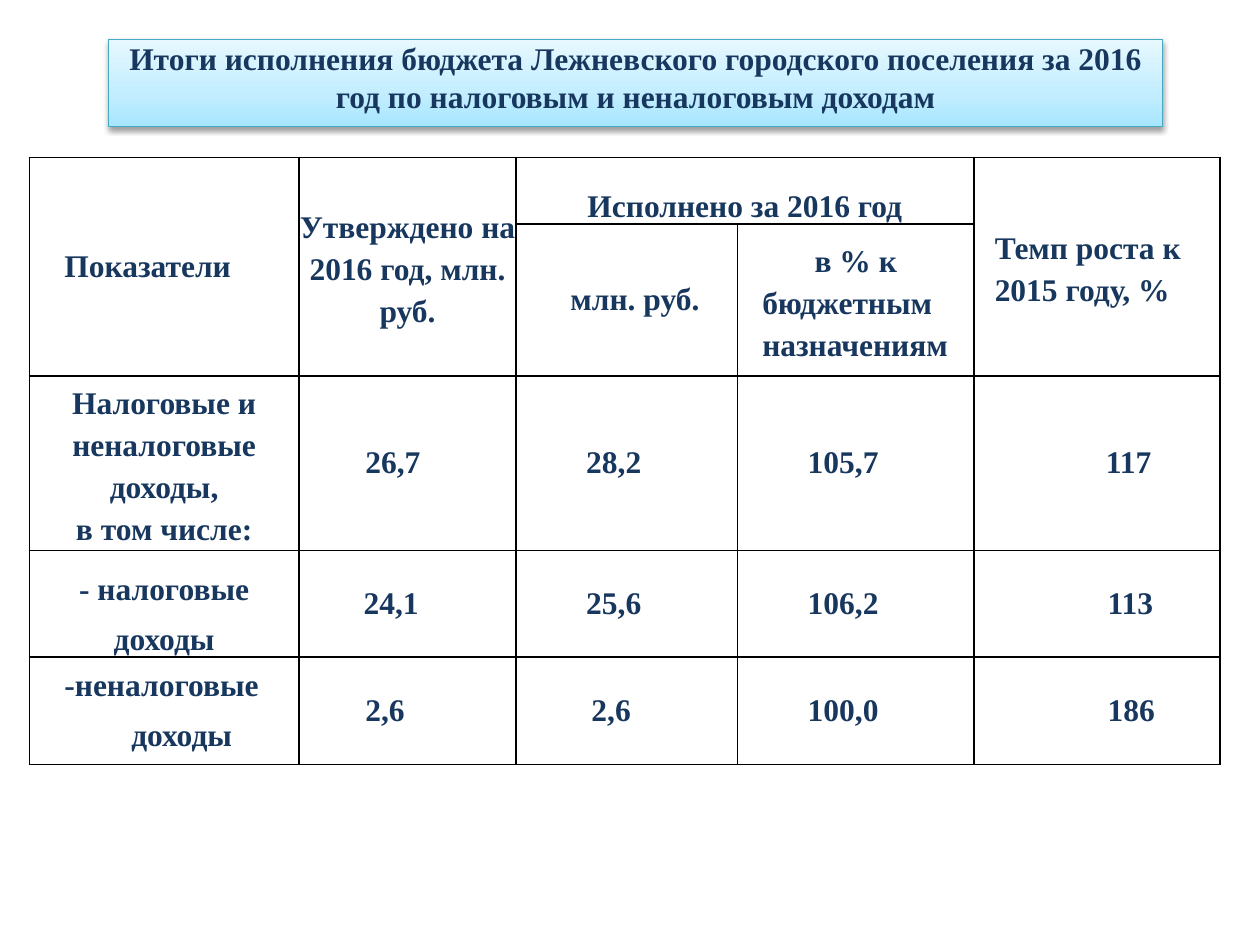
from copy import deepcopy
from pptx import Presentation
from pptx.dml.color import RGBColor
from pptx.enum.shapes import MSO_SHAPE
from pptx.enum.text import MSO_ANCHOR, PP_ALIGN
from pptx.oxml import parse_xml
from pptx.oxml.ns import nsdecls, qn
from pptx.util import Pt

HUES = {"ink": "17375E", "edge": "46AAC5", "rule": "000000",
        "low": "A7E6FF", "mid": "C1EDFF", "high": "E7F8FF"}
FONT = {"name": "Times New Roman", "size": Pt(18), "bold": True}
FLUSH = {f"margin_{side}": 0 for side in ("left", "top", "right", "bottom")}
TITLE = ("Итоги исполнения бюджета Лежневского городского поселения за 2016 "
         "год по налоговым и неналоговым доходам")

COLS = [154, 124.2, 126.6, 134.9, 140.6]
ROWS = [38, 87, 99.7, 60.8, 61.4]
MERGES = [((0, 0), (1, 0)), ((0, 1), (1, 1)), ((0, 2), (0, 3)), ((0, 4), (1, 4))]


def put(item, **vals):
    for key, val in vals.items():
        setattr(item, key, val)


def line(text, left=None, **vals):
    """One paragraph: centred unless it has a left indent."""
    align = PP_ALIGN.CENTER if left is None else PP_ALIGN.LEFT
    return text, left or 0, {"alignment": align, **vals}


def write(frame, lines):
    for num, (text, left, vals) in enumerate(lines):
        para = frame.add_paragraph() if num else frame.paragraphs[0]
        put(para, **vals)
        if left:
            props = para._p.get_or_add_pPr()
            props.set("marL", str(int(Pt(left))))
            props.set("indent", "0")
        run = para.add_run()
        run.text = text
        put(run.font, **FONT)
        run.font.color.rgb = RGBColor.from_string(HUES["ink"])


WIDE = {"line_spacing": Pt(24)}
GAP = {"space_after": Pt(8.4)}
HEADS = {
    (0, 0): [line("Показатели", 20)],
    (0, 1): [line("Утверждено на 2016 год, млн. руб.", **WIDE)],
    (0, 2): [line("Исполнено за 2016 год")],
    (0, 4): [line("Темп роста к 2015 году, %", 12, **WIDE)],
    (1, 2): [line("млн. руб.", 31)],
    (1, 3): [line("в % к", **WIDE), line("бюджетным", 14, **WIDE),
             line("назначениям", 14, **WIDE)],
    (2, 0): [line("Налоговые и неналоговые доходы,", **WIDE),
             line("в том числе:", **WIDE)],
    (3, 0): [line("- налоговые", **GAP), line("доходы")],
    (4, 0): [line("-неналоговые", 20, **GAP),
             ("доходы", 20, {"alignment": PP_ALIGN.CENTER})],
}
# Values by row, each with its left indent
DATA = [
    [("26,7", 38), ("28,2", 40), ("105,7", 40), ("117", 75.5)],
    [("24,1", 37), ("25,6", 40), ("106,2", 40), ("113", 76.5)],
    [("2,6", 38), ("2,6", 43), ("100,0", 40), ("186", 76.5)],
]


def banner(slide, x, y, w, h):
    box = slide.shapes.add_shape(MSO_SHAPE.RECTANGLE, Pt(x), Pt(y), Pt(w), Pt(h))
    # Gradient from bottom to top
    box.fill.gradient()
    box.fill.gradient_angle = 90
    stops = box._element.spPr.find(".//" + qn("a:gsLst"))
    stops.append(deepcopy(stops[-1]))
    tints = (("low", 0), ("mid", 0.35), ("high", 1))
    for stop, (hue, place) in zip(box.fill.gradient_stops, tints):
        stop.color.rgb = RGBColor.from_string(HUES[hue])
        stop.position = place
    box.line.color.rgb = RGBColor.from_string(HUES["edge"])
    box.line.width = Pt(0.75)
    # Soft shadow below
    box.shadow.inherit = False
    box._element.spPr.find(qn("a:effectLst")).append(parse_xml(
        f'<a:outerShdw {nsdecls("a")} blurRad="{Pt(3.1)}" dist="{Pt(1.6)}" '
        'dir="5400000" rotWithShape="0"><a:srgbClr val="000000">'
        '<a:alpha val="38000"/></a:srgbClr></a:outerShdw>'))
    frame = box.text_frame
    put(frame, word_wrap=True, vertical_anchor=MSO_ANCHOR.TOP, **FLUSH)
    write(frame, [line(TITLE, **GAP)])


def border(cell):
    props = cell._tc.get_or_add_tcPr()
    for num, side in enumerate("LRTB"):
        props.insert(num, parse_xml(
            f'<a:ln{side} {nsdecls("a")} w="{Pt(1)}"><a:solidFill>'
            f'<a:srgbClr val="{HUES["rule"]}"/></a:solidFill></a:ln{side}>'))


def grid(slide, x, y, w, h):
    table = slide.shapes.add_table(len(ROWS), len(COLS),
                                   Pt(x), Pt(y), Pt(w), Pt(h)).table
    put(table, first_row=False, horz_banding=False)
    for col, size in zip(table.columns, COLS):
        col.width = Pt(size * w / sum(COLS))
    for row, size in zip(table.rows, ROWS):
        row.height = Pt(size * h / sum(ROWS))
    for start, end in MERGES:
        table.cell(*start).merge(table.cell(*end))
    # Headings and values share one map
    texts = dict(HEADS)
    for r, vals in enumerate(DATA, 2):
        for c, (text, left) in enumerate(vals, 1):
            texts[r, c] = [line(text, left)]
    for r in range(len(ROWS)):
        for c in range(len(COLS)):
            cell = table.cell(r, c)
            low = (r, c) in ((0, 2), (3, 0))
            put(cell, vertical_anchor=MSO_ANCHOR.BOTTOM if low
                else MSO_ANCHOR.MIDDLE, **FLUSH)
            cell.fill.background()
            border(cell)
            write(cell.text_frame, texts.get((r, c), []))


def main():
    deck = Presentation()
    put(deck, slide_width=Pt(720), slide_height=Pt(540))
    slide = deck.slides.add_slide(deck.slide_layouts[6])
    banner(slide, 62, 22.5, 602.5, 49.7)
    grid(slide, 16.8, 89.9, sum(COLS), sum(ROWS))
    deck.save("out.pptx")


if __name__ == "__main__":
    main()
